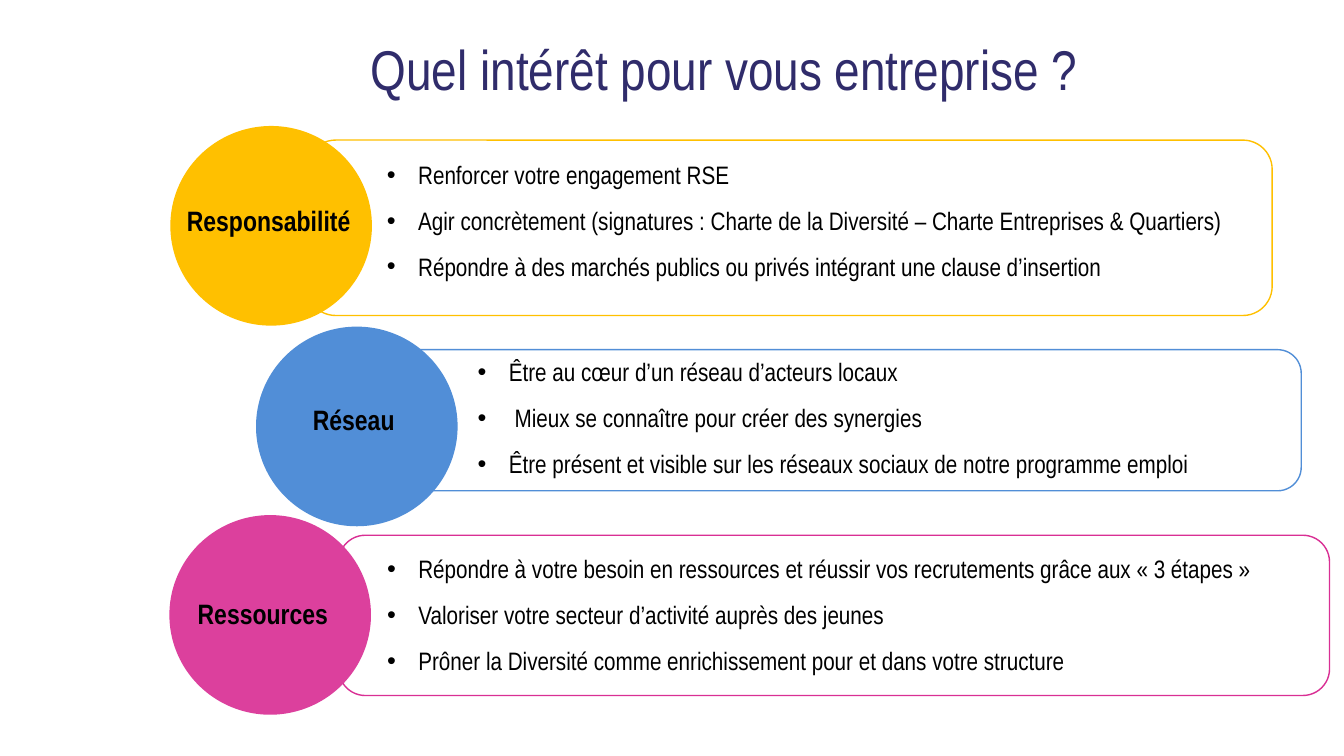
from typing import NamedTuple

import pptx
import pptx.dml.color
import pptx.enum.shapes
import pptx.enum.text
import pptx.oxml
import pptx.oxml.ns
import pptx.util

Pt = pptx.util.Pt
SHAPE = pptx.enum.shapes.MSO_SHAPE
ALIGN = pptx.enum.text.PP_ALIGN
ANCHOR = pptx.enum.text.MSO_ANCHOR
FONT = "Arial Narrow"
CIRCLE_WIDTH, CIRCLE_HEIGHT = 144, 142.6
LABEL_HEIGHT = 31.7
BULLET_INDENT = 22.3
BULLET_GAP = 11.2


class Box(NamedTuple):
    left: float
    top: float
    width: float
    height: float


class Insets(NamedTuple):
    left: float = 7.2
    top: float = 3.6
    right: float = 7.2
    bottom: float = 3.6


class Benefit(NamedTuple):
    label: str
    fill: str
    line: str
    circle: tuple[float, float]
    panel: Box
    label_box: Box
    list_box: Box
    insets: Insets
    anchor: pptx.enum.text.MSO_ANCHOR
    items: list[str]


BENEFITS = [
    Benefit(
        "Responsabilité", "FFC000", "FFC000", (121.7, 90),
        Box(218.9, 100.1, 689.8, 125.3),
        Box(118.1, 141.8, 147.6, LABEL_HEIGHT),
        Box(269.3, 110.2, 628.6, 95), Insets(), ANCHOR.TOP,
        ["Renforcer votre engagement RSE",
         "Agir concrètement (signatures : Charte de la Diversité – Charte Entreprises & Quartiers)",
         "Répondre à des marchés publics ou privés intégrant une clause d’insertion"],
    ),
    Benefit(
        "Réseau", "518ED7", "518ED7", (182.9, 233.3),
        Box(254.9, 249.8, 674.6, 100.8),
        Box(187.9, 283.7, 129.6, LABEL_HEIGHT),
        Box(334.1, 251.3, 609.8, 91.4), Insets(bottom=0), ANCHOR.TOP,
        ["Être au cœur d’un réseau d’acteurs locaux",
         " Mieux se connaître pour créer des synergies",
         "Être présent et visible sur les réseaux sociaux de notre programme emploi"],
    ),
    Benefit(
        "Ressources ", "DC409D", "D92F94", (121, 367.9),
        Box(241.9, 382.3, 707.8, 114.5),
        Box(125.3, 422.6, 129.6, LABEL_HEIGHT),
        Box(205.9, 386.6, 733.7, 96.5), Insets(70.6, 8.6, 36.7, 0), ANCHOR.MIDDLE,
        ["Répondre à votre besoin en ressources et réussir vos recrutements grâce aux « 3 étapes »",
         "Valoriser votre secteur d’activité auprès des jeunes",
         "Prôner la Diversité comme enrichissement pour et dans votre structure"],
    ),
]


def color(value: str) -> pptx.dml.color.RGBColor:
    return pptx.dml.color.RGBColor.from_string(value)


def add_panel(s: pptx.slide.Slide, box: Box, line: str) -> None:
    sp = s.shapes.add_shape(SHAPE.ROUNDED_RECTANGLE, *map(Pt, box))
    sp.shadow.inherit = False
    sp.fill.background()
    sp.line.color.rgb = color(line)
    sp.line.width = Pt(1)


def add_circle(s: pptx.slide.Slide, left: float, top: float, fill: str) -> None:
    box = Box(left, top, CIRCLE_WIDTH, CIRCLE_HEIGHT)
    sp = s.shapes.add_shape(SHAPE.OVAL, *map(Pt, box))
    sp.shadow.inherit = False
    sp.fill.solid()
    sp.fill.fore_color.rgb = color(fill)
    sp.line.fill.background()


def add_text(s: pptx.slide.Slide, box: Box, text: str, size: float,
             font_color: str = "000000", bold: bool = False,
             insets: Insets = Insets(),
             anchor: pptx.enum.text.MSO_ANCHOR = ANCHOR.TOP,
             align: pptx.enum.text.PP_ALIGN = ALIGN.CENTER) -> pptx.text.text.TextFrame:
    tf = s.shapes.add_textbox(*map(Pt, box)).text_frame
    tf.word_wrap = True
    tf.vertical_anchor = anchor
    tf.margin_left, tf.margin_top, tf.margin_right, tf.margin_bottom = map(Pt, insets)
    tf.text = text
    for p in tf.paragraphs:
        p.alignment = align
        for r in p.runs:
            r.font.name = FONT
            r.font.size = Pt(size)
            r.font.bold = bold
            r.font.color.rgb = color(font_color)
    return tf


def add_bullets(s: pptx.slide.Slide, benefit: Benefit) -> None:
    tf = add_text(s, benefit.list_box, "\n".join(benefit.items), 18,
                  insets=benefit.insets, anchor=benefit.anchor, align=ALIGN.LEFT)
    for i, p in enumerate(tf.paragraphs):
        if i:
            p.space_before = Pt(BULLET_GAP)
        pPr = p._p.get_or_add_pPr()
        pPr.set("marL", str(Pt(BULLET_INDENT)))
        pPr.set("indent", str(-Pt(BULLET_INDENT)))
        ns = pptx.oxml.ns.nsdecls("a")
        pPr.append(pptx.oxml.parse_xml(f'<a:buFont {ns} typeface="Arial"/>'))
        pPr.append(pptx.oxml.parse_xml(f'<a:buChar {ns} char="•"/>'))


def main() -> None:
    prs = pptx.Presentation()
    prs.slide_width, prs.slide_height = Pt(960), Pt(540)
    s = prs.slides.add_slide(prs.slide_layouts[6])
    title = add_text(s, Box(129.6, 20.9, 784.1, 61.9),
                     "Quel intérêt pour vous entreprise ? ", 40, "302C6B",
                     anchor=ANCHOR.MIDDLE)
    title.paragraphs[0].line_spacing = 0.9
    for benefit in reversed(BENEFITS):
        add_panel(s, benefit.panel, benefit.line)
    for benefit in BENEFITS:
        add_circle(s, *benefit.circle, benefit.fill)
    for benefit in BENEFITS:
        add_text(s, benefit.label_box, benefit.label, 20, bold=True)
        add_bullets(s, benefit)
    prs.save("out.pptx")


if __name__ == "__main__":
    main()
